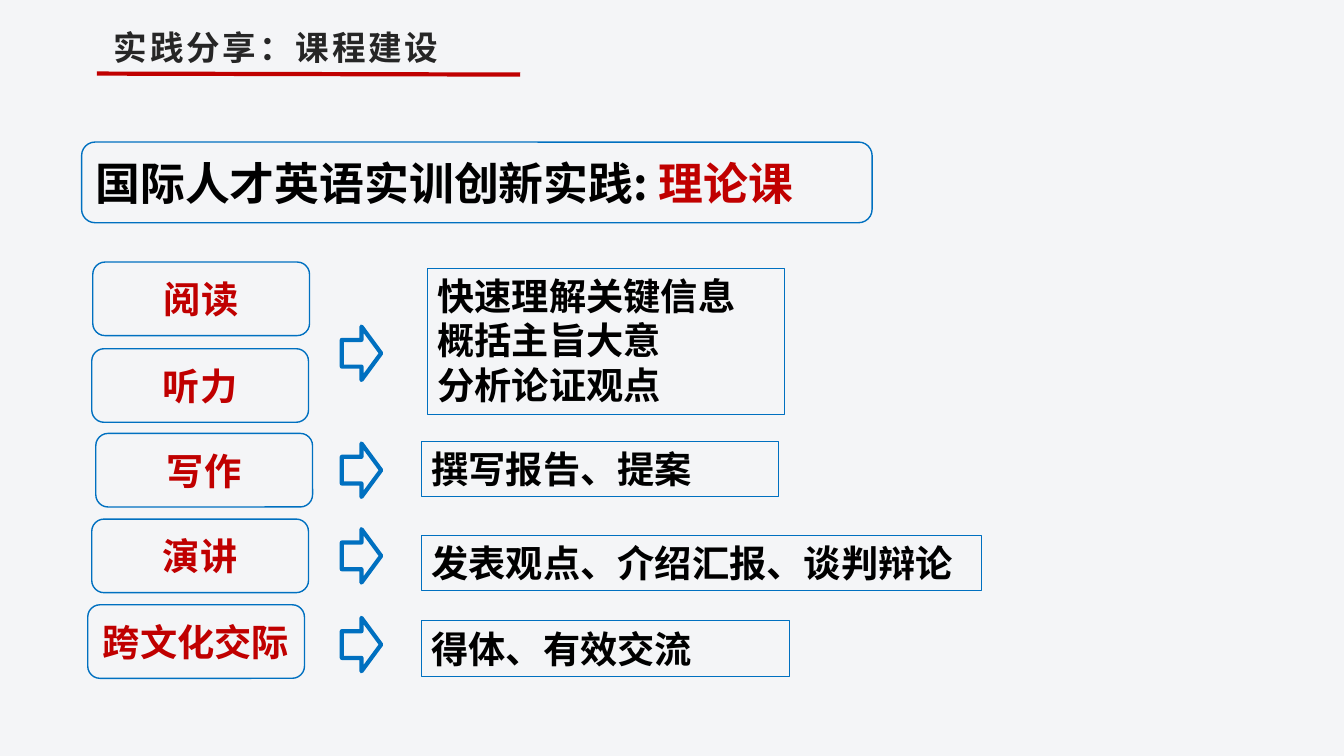
from dataclasses import dataclass

from lxml import etree
from pptx import Presentation
from pptx.dml.color import RGBColor
from pptx.enum.shapes import MSO_CONNECTOR, MSO_SHAPE
from pptx.enum.text import MSO_ANCHOR, PP_ALIGN
from pptx.oxml.ns import qn
from pptx.shapes.autoshape import Shape
from pptx.slide import Slide
from pptx.util import Inches, Pt

ROUNDED = MSO_SHAPE.ROUNDED_RECTANGLE
RECTANGLE = MSO_SHAPE.RECTANGLE
RIGHT_ARROW = MSO_SHAPE.RIGHT_ARROW
STRAIGHT = MSO_CONNECTOR.STRAIGHT
LEFT, CENTER = PP_ALIGN.LEFT, PP_ALIGN.CENTER
TOP, MIDDLE = MSO_ANCHOR.TOP, MSO_ANCHOR.MIDDLE

BLUE, RED, BLACK, GREY, PAPER = "0070C0", "C00000", "000000", "262626", "F4F5F7"
BODY_FONT, HEADER_FONT = "Noto Sans CJK SC", "League Spartan"
BODY_SIZE = 26.6
SKILL_WIDTH, SKILL_HEIGHT = 2.15, 0.73
ARROW_LEFT, ARROW_WIDTH, ARROW_HEIGHT = 3.39, 0.39, 0.53


@dataclass(frozen=True)
class Skill:
    name: str
    left: float
    top: float


@dataclass(frozen=True)
class Goal:
    text: str
    left: float
    top: float
    width: float
    height: float
    arrow_top: float


SKILLS = [
    Skill("阅读", 0.92, 2.6),
    Skill("听力", 0.91, 3.46),
    Skill("写作", 0.95, 4.3),
    Skill("演讲", 0.91, 5.15),
    Skill("跨文化交际", 0.87, 6),
]
GOALS = [
    Goal("快速理解关键信息\n概括主旨大意\n分析论证观点", 4.24, 2.66, 3.54, 1.45, 3.24),
    Goal("撰写报告、提案", 4.18, 4.38, 3.54, 0.55, 4.4),
    Goal("发表观点、介绍汇报、谈判辩论", 4.18, 5.31, 5.56, 0.55, 5.25),
    Goal("得体、有效交流", 4.18, 6.16, 3.65, 0.55, 6.13),
]


def color(value: str) -> RGBColor:
    return RGBColor.from_string(value)


def format_run(run, size: float, hex_color: str, font_name: str = BODY_FONT) -> None:
    run.font.size = Pt(size)
    run.font.bold = True
    run.font.name = font_name
    run.font.color.rgb = color(hex_color)
    east_asian = etree.SubElement(run.font._element, qn("a:ea"))
    east_asian.set("typeface", BODY_FONT)


def add_outline(slide: Slide, kind: MSO_SHAPE, left: float, top: float,
                width: float, height: float, line_width: float) -> Shape:
    shape = slide.shapes.add_shape(
        kind, Inches(left), Inches(top), Inches(width), Inches(height))
    shape.shadow.inherit = False
    shape.fill.background()
    shape.line.color.rgb = color(BLUE)
    shape.line.width = Pt(line_width)
    return shape


def write_text(shape: Shape, text: str, hex_color: str, size: float = BODY_SIZE,
               alignment: PP_ALIGN = LEFT, anchor: MSO_ANCHOR = MIDDLE) -> None:
    frame = shape.text_frame
    frame.word_wrap = True
    frame.vertical_anchor = anchor
    frame.text = text
    for paragraph in frame.paragraphs:
        paragraph.alignment = alignment
        for run in paragraph.runs:
            format_run(run, size, hex_color)


def add_header(slide: Slide) -> None:
    underline = slide.shapes.add_connector(
        STRAIGHT, Inches(0.96), Inches(0.73), Inches(5.16), Inches(0.74))
    underline.line.color.rgb = color(RED)
    underline.line.width = Pt(3)
    etree.SubElement(underline._element.spPr, qn("a:effectLst"))

    header = slide.shapes.add_textbox(
        Inches(1.03), Inches(0.22), Inches(4.19), Inches(0.5))
    header.text_frame.word_wrap = True
    header.text_frame.text = "实践分享：课程建设"
    run = header.text_frame.paragraphs[0].runs[0]
    format_run(run, 24, GREY, HEADER_FONT)
    run.font._element.set("spc", "200")


def add_course_title(slide: Slide) -> None:
    box = add_outline(slide, ROUNDED, 0.81, 1.41, 7.84, 0.8, 1)
    write_text(box, "国际人才英语实训创新实践: ", BLACK, 32)
    course_type = box.text_frame.paragraphs[0].add_run()
    course_type.text = "理论课"
    format_run(course_type, 32, RED)


def add_skill(slide: Slide, skill: Skill) -> None:
    box = add_outline(slide, ROUNDED, skill.left, skill.top,
                      SKILL_WIDTH, SKILL_HEIGHT, 1)
    write_text(box, skill.name, RED, alignment=CENTER)


def add_goal(slide: Slide, goal: Goal) -> None:
    add_outline(slide, RIGHT_ARROW, ARROW_LEFT, goal.arrow_top,
                ARROW_WIDTH, ARROW_HEIGHT, 3)
    box = add_outline(slide, RECTANGLE, goal.left, goal.top,
                      goal.width, goal.height, 0.75)
    write_text(box, goal.text, BLACK, anchor=TOP)


def main() -> None:
    presentation = Presentation()
    presentation.slide_width = Inches(13.33)
    presentation.slide_height = Inches(7.5)
    slide = presentation.slides.add_slide(presentation.slide_layouts[6])
    slide.background.fill.solid()
    slide.background.fill.fore_color.rgb = color(PAPER)

    # Header and course title
    add_header(slide)
    add_course_title(slide)

    # Skills on the left, goals on the right
    for skill in SKILLS:
        add_skill(slide, skill)
    for goal in GOALS:
        add_goal(slide, goal)

    presentation.save("out.pptx")


if __name__ == "__main__":
    main()
